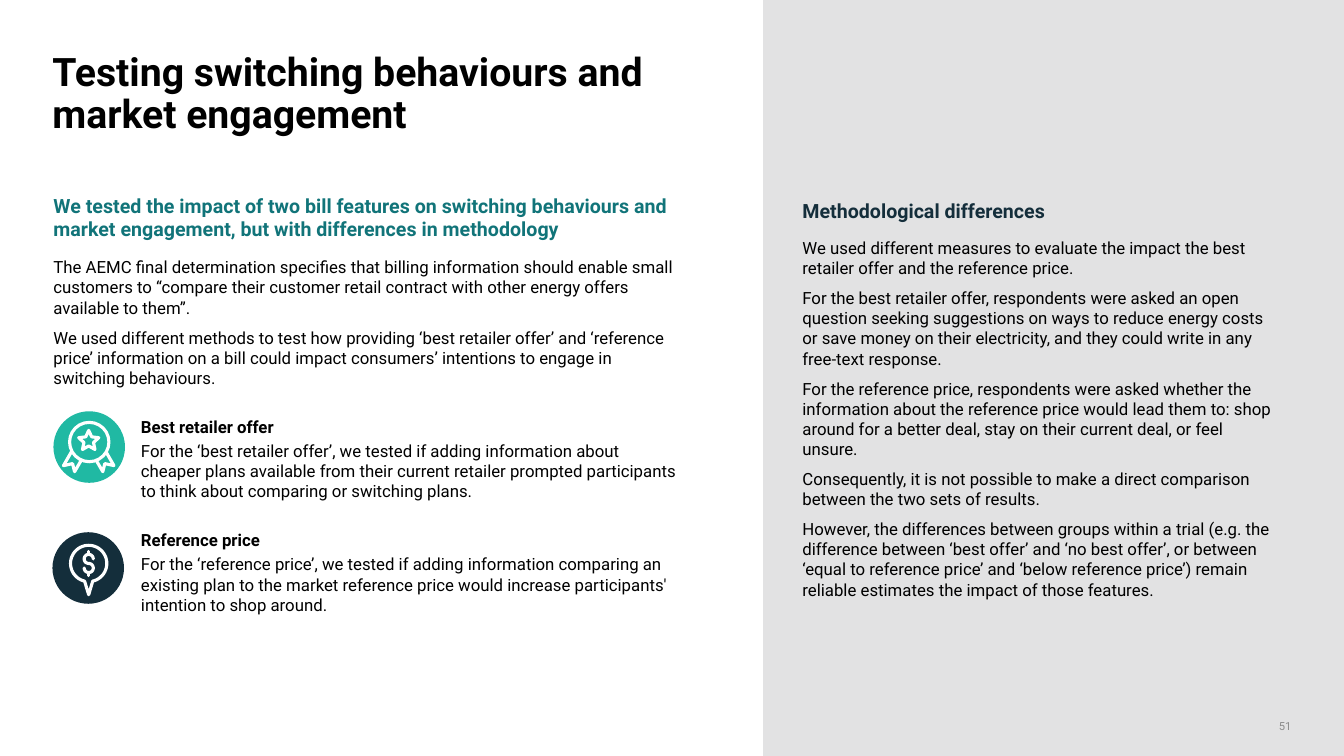
import math

import pptx
import pptx.dml.color
import pptx.enum.shapes
import pptx.enum.text
import pptx.oxml
import pptx.oxml.ns
import pptx.util

Inches = pptx.util.Inches
RGBColor = pptx.dml.color.RGBColor
Align = pptx.enum.text.PP_ALIGN
Anchor = pptx.enum.text.MSO_ANCHOR
Preset = pptx.enum.shapes.MSO_SHAPE

WHITE = RGBColor(0xFF, 0xFF, 0xFF)
BLACK = RGBColor(0x00, 0x00, 0x00)
PANEL_GREY = RGBColor(0xE2, 0xE2, 0xE3)
NUMBER_GREY = RGBColor(0x8C, 0x8C, 0x8C)
NAVY = RGBColor(0x14, 0x2E, 0x3B)
TEAL = RGBColor(0x11, 0x74, 0x79)
MINT = RGBColor(0x20, 0xB9, 0xA3)

INTRO = [
    "The AEMC final determination specifies that billing information should enable small customers to “compare their customer retail contract with other energy offers available to them”.",
    "We used different methods to test how providing ‘best retailer offer’ and ‘reference price’ information on a bill could impact consumers’ intentions to engage in switching behaviours.",
]
FEATURES = [
    "Best retailer offer",
    "For the ‘best retailer offer’, we tested if adding information about cheaper plans available from their current retailer prompted participants to think about comparing or switching plans.",
    "Reference price",
    "For the ‘reference price’, we tested if adding information comparing an existing plan to the market reference price would increase participants' intention to shop around.",
]
METHODS = [
    "We used different measures to evaluate the impact the best retailer offer and the reference price.",
    "For the best retailer offer, respondents were asked an open question seeking suggestions on ways to reduce energy costs or save money on their electricity, and they could write in any free-text response.",
    "For the reference price, respondents were asked whether the information about the reference price would lead them to: shop around for a better deal, stay on their current deal, or feel unsure.",
    "Consequently, it is not possible to make a direct comparison between the two sets of results.",
    "However, the differences between groups within a trial (e.g. the difference between ‘best offer’ and ‘no best offer’, or between ‘equal to reference price’ and ‘below reference price’) remain reliable estimates the impact of those features.",
]


def write_text(frame, paragraphs, size=12, color=BLACK, bold=(), before=0, after=0,
               section_gap=0, line_spacing=None, align=Align.LEFT, font="Roboto"):
    for index, words in enumerate(paragraphs):
        paragraph = frame.paragraphs[0] if index == 0 else frame.add_paragraph()
        is_bold = index in bold
        if index:
            gap = section_gap if is_bold else before
            paragraph.space_before = pptx.util.Pt(gap)
        paragraph.space_after = pptx.util.Pt(after)
        paragraph.alignment = align
        if line_spacing:
            paragraph.line_spacing = line_spacing
        run = paragraph.add_run()
        run.text = words
        run.font.name = font
        run.font.size = pptx.util.Pt(size)
        run.font.bold = is_bold
        run.font.color.rgb = color


def arc(cx, cy, radius, start, end, steps=24):
    angles = [math.radians(start + (end - start) * i / steps) for i in range(steps + 1)]
    return [(cx + radius * math.cos(a), cy + radius * math.sin(a)) for a in angles]


class SlideBuilder:
    def __init__(self, slide, stroke=WHITE, stroke_width=2.25):
        self.slide = slide
        self.canvas = slide.shapes
        self.stroke = stroke
        self.stroke_width = pptx.util.Pt(stroke_width)

    def start_icon(self):
        self.canvas = self.slide.shapes.add_group_shape().shapes

    def end_icon(self):
        self.canvas = self.slide.shapes

    def text(self, left, top, width, height, paragraphs, padded=True,
             anchor=Anchor.TOP, **style):
        box = self.canvas.add_textbox(Inches(left), Inches(top), Inches(width), Inches(height))
        frame = box.text_frame
        frame.word_wrap = True
        frame.vertical_anchor = anchor
        if not padded:
            frame.margin_left = frame.margin_right = 0
            frame.margin_top = frame.margin_bottom = 0
        write_text(frame, paragraphs, **style)

    def shape(self, preset, left, top, width, height, fill, outlined=False):
        shape = self.canvas.add_shape(preset, Inches(left), Inches(top),
                                      Inches(width), Inches(height))
        self.finish(shape, fill, outlined)

    def outline(self, points, fill=None, close=False):
        start, *rest = [(Inches(x), Inches(y)) for x, y in points]
        builder = self.canvas.build_freeform(*start)
        builder.add_line_segments(rest, close=close)
        self.finish(builder.convert_to_shape(), fill, True)

    def line(self, x, top, bottom):
        connector = self.canvas.add_connector(
            pptx.enum.shapes.MSO_CONNECTOR.STRAIGHT,
            Inches(x), Inches(top), Inches(x), Inches(bottom))
        self.draw_stroke(connector)
        properties = connector._element.spPr
        properties.append(pptx.oxml.parse_xml(
            f'<a:effectLst {pptx.oxml.ns.nsdecls("a")}/>'))

    def finish(self, shape, fill, outlined):
        shape.shadow.inherit = False
        if fill is None:
            shape.fill.background()
        else:
            shape.fill.solid()
            shape.fill.fore_color.rgb = fill
        if outlined:
            self.draw_stroke(shape)
        else:
            shape.line.fill.background()

    def draw_stroke(self, shape):
        shape.line.color.rgb = self.stroke
        shape.line.width = self.stroke_width
        stroke = shape.line._get_or_add_ln()
        stroke.set("cap", "rnd")
        stroke.append(pptx.oxml.parse_xml(f'<a:round {pptx.oxml.ns.nsdecls("a")}/>'))


def draw_price_icon(page):
    x = 0.88
    page.start_icon()
    page.shape(Preset.OVAL, 0.52, 5.28, 0.71, 0.71, NAVY)
    page.outline(arc(x, 5.59, 0.18, 103, 437, 48) + [(x, 5.9)], close=True)
    page.outline(arc(x, 5.635, 0.045, 180, -90) + arc(x, 5.545, 0.045, 90, 360))
    for top in (5.68, 5.47):
        page.line(x, top, top + 0.03)
    page.end_icon()


def draw_offer_icon(page):
    x = 0.88
    ribbon = [(0.17, 4.48), (0.25, 4.62), (0.16, 4.6), (0.14, 4.68), (0.07, 4.56)]
    page.start_icon()
    page.shape(Preset.OVAL, 0.53, 4.08, 0.71, 0.71, MINT)
    for side in (-1, 1):
        page.outline([(x + side * offset, y) for offset, y in ribbon], fill=MINT)
    page.shape(Preset.OVAL, 0.69, 4.19, 0.39, 0.39, MINT, outlined=True)
    star = []
    for i in range(10):
        radius = 0.05 if i % 2 else 0.105
        star += arc(x, 4.375, radius, 36 * i - 90, 36 * i - 90, 1)[:1]
    page.outline(star, fill=MINT, close=True)
    page.end_icon()


def main():
    deck = pptx.Presentation()
    deck.slide_width, deck.slide_height = Inches(13.33), Inches(7.5)
    page = SlideBuilder(deck.slides.add_slide(deck.slide_layouts[6]))

    page.shape(Preset.RECTANGLE, 7.57, 0, 5.76, 7.5, PANEL_GREY)
    page.text(0.52, 0.52, 6.1, 0.85, ["Testing switching behaviours and market engagement"],
              padded=False, size=28, bold=[0], line_spacing=0.9)
    page.text(0.53, 1.92, 6.3, 0.47,
              ["We tested the impact of two bill features on switching behaviours and "
               "market engagement, but with differences in methodology"],
              padded=False, size=14, color=TEAL, bold=[0])
    page.text(0.53, 2.55, 6.3, 1.39, INTRO, padded=False, before=7)
    draw_offer_icon(page)
    draw_price_icon(page)
    page.text(1.3, 4.08, 5.53, 2.09, FEATURES, bold=[0, 2], after=3, section_gap=17.5)

    page.text(7.86, 1.92, 5.06, 0.34, ["Methodological differences"],
              size=14, color=NAVY, bold=[0])
    page.text(7.86, 2.31, 4.95, 4.33, METHODS, before=7)
    page.text(12.36, 7.14, 0.45, 0.13, ["51"], padded=False, anchor=Anchor.BOTTOM,
              size=8, color=NUMBER_GREY, align=Align.RIGHT)
    deck.save("out.pptx")


if __name__ == "__main__":
    main()
